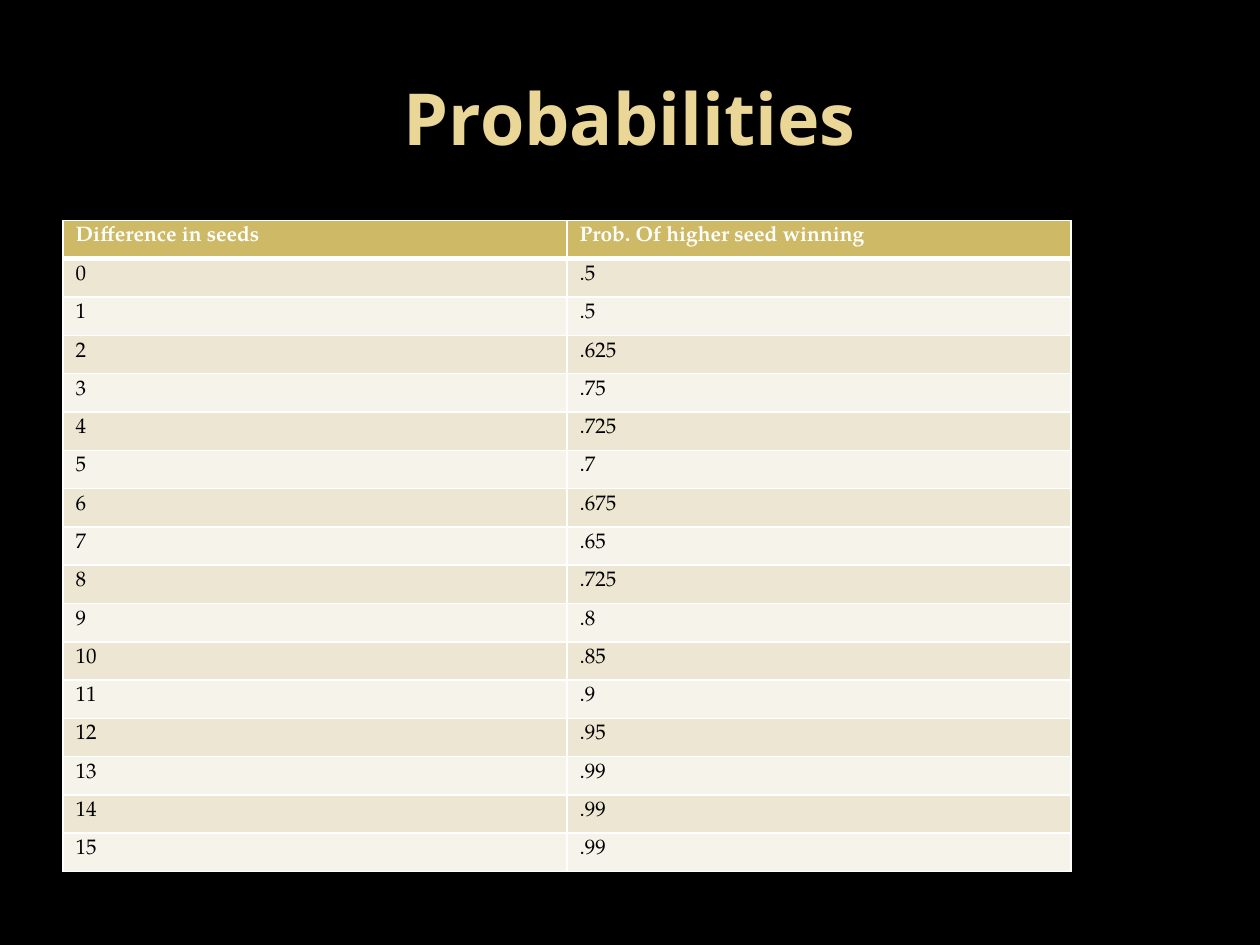
from lxml.etree import SubElement as Sub
from pptx import Presentation as Deck
from pptx.dml.color import RGBColor as Color
from pptx.enum.text import MSO_ANCHOR as Anchor, PP_ALIGN as Align
from pptx.oxml.ns import qn
from pptx.util import Inches, Pt

TITLE = {"name": "Open Sans", "size": Pt(41), "bold": True}
HEAD = {"name": "TeX Gyre Pagella", "size": Pt(12), "bold": True}
BODY = {**HEAD, "bold": False}
GOLD, SAND, CREAM = "CEB966", "EDE6D3", "F6F3EA"
WHITE, BLACK, PALE = "FFFFFF", "000000", "EAD696"
ODDS = (".5 .5 .625 .75 .725 .7 .675 .65 .725 "
        ".8 .85 .9 .95 .99 .99 .99").split()


def paint(fill, tone):
    fill.solid()
    fill.fore_color.rgb = Color.from_string(tone)


class Page:
    """Holds the text style and the current slide."""

    def __init__(self, deck, tone):
        self.slide = deck.slides.add_slide(deck.slide_layouts[6])
        paint(self.slide.background.fill, tone)

    def label(self, frame, text, style, tone):
        para = frame.paragraphs[0]
        run = para.add_run()
        run.text = text
        for key, value in style.items():
            setattr(run.font, key, value)
        run.font.color.rgb = Color.from_string(tone)
        return para

    def title(self, text, *box):
        frame = self.slide.shapes.add_textbox(*map(Inches, box)).text_frame
        frame.word_wrap = True
        frame.vertical_anchor = Anchor.MIDDLE
        self.label(frame, text, TITLE, PALE).alignment = Align.CENTER

    def edge(self, cell, side, width):
        props = cell._tc.get_or_add_tcPr()
        line = Sub(props, qn(f"a:ln{side}"), w=str(Pt(width)))
        Sub(Sub(line, qn("a:solidFill")), qn("a:srgbClr"), val=WHITE)

    def table(self, rows, *box):
        area = map(Inches, box)
        grid = self.slide.shapes.add_table(len(rows), len(rows[0]), *area).table
        for r, row in enumerate(rows):
            back = (CREAM if r % 2 == 0 else SAND) if r else GOLD
            style, ink = (BODY, BLACK) if r else (HEAD, WHITE)
            sides = {"L": 1, "R": 1, "T": 3 if r == 1 else 1, "B": 1 if r else 3}
            for c, text in enumerate(row):
                cell = grid.cell(r, c)
                for side, width in sides.items():
                    self.edge(cell, side, width)
                paint(cell.fill, back)
                self.label(cell.text_frame, text, style, ink)


def main():
    deck = Deck()
    deck.slide_width, deck.slide_height = Inches(10), Inches(7.5)
    page = Page(deck, BLACK)
    page.title("Probabilities", 0.5, 0.3, 9, 1.25)
    rows = [("Difference in seeds", "Prob. Of higher seed winning")]
    rows += [(str(gap), odds) for gap, odds in enumerate(ODDS)]
    page.table(rows, 0.5, 1.75, 8, 5.17)
    deck.save("out.pptx")


if __name__ == "__main__":
    main()
